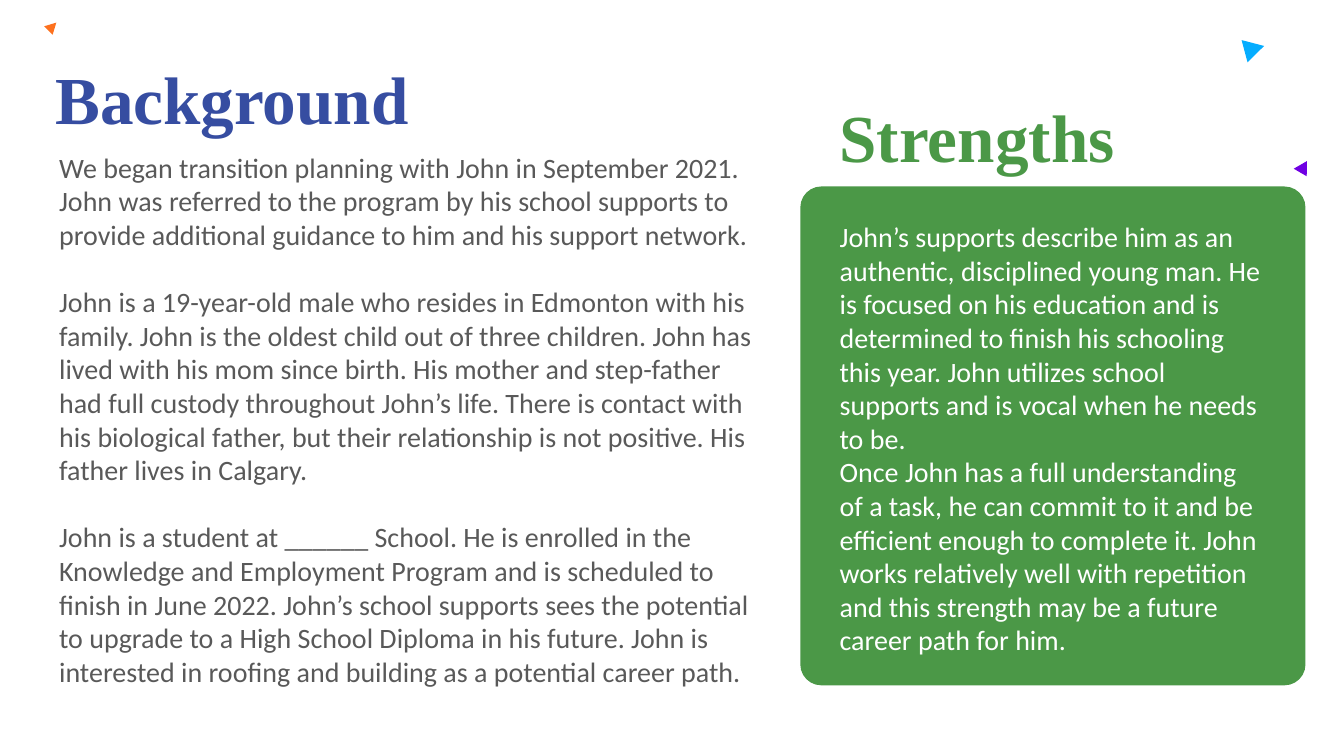
from dataclasses import dataclass

from pptx import Presentation
from pptx.dml.color import RGBColor
from pptx.enum.shapes import MSO_SHAPE
from pptx.enum.text import MSO_ANCHOR, MSO_AUTO_SIZE, PP_ALIGN
from pptx.util import Cm, Pt

TRIANGLE = MSO_SHAPE.ISOSCELES_TRIANGLE
ROUNDED = MSO_SHAPE.ROUNDED_RECTANGLE
BOTTOM = MSO_ANCHOR.BOTTOM
LEFT = PP_ALIGN.LEFT
FIXED = MSO_AUTO_SIZE.NONE
GROW = MSO_AUTO_SIZE.SHAPE_TO_FIT_TEXT


@dataclass(frozen=True)
class Theme:
    """Colours, fonts and type sizes of the slide."""
    blue: str = "364DA1"
    green: str = "4B9847"
    grey: str = "595959"
    white: str = "FFFFFF"
    sky: str = "05ADFF"
    orange: str = "FD711E"
    purple: str = "7000E3"
    heading_font: str = "Times New Roman"
    body_font: str = "Calibri"
    heading_size: int = 48
    body_size: int = 20
    paragraph_gap: int = 24


THEME = Theme()

BACKGROUND = [
    "We began transition planning with John in September 2021. John was referred to the program "
    "by his school supports to provide additional guidance to him and his support network.",
    "John is a 19-year-old male who resides in Edmonton with his family. John is the oldest child "
    "out of three children. John has lived with his mom since birth. His mother and step-father "
    "had full custody throughout John’s life. There is contact with his biological father, but "
    "their relationship is not positive. His father lives in Calgary.",
    "John is a student at ______ School. He is enrolled in the Knowledge and Employment Program "
    "and is scheduled to finish in June 2022. John’s school supports sees the potential to upgrade "
    "to a High School Diploma in his future. John is interested in roofing and building as a "
    "potential career path.",
]
STRENGTHS = [
    "John’s supports describe him as an authentic, disciplined young man. He is focused on his "
    "education and is determined to finish his schooling this year. John utilizes school supports "
    "and is vocal when he needs to be.",
    "Once John has a full understanding of a task, he can commit to it and be efficient enough to "
    "complete it. John works relatively well with repetition and this strength may be a future "
    "career path for him.",
]
CONFETTI = [
    (31.32, 0.97, 0.58, 0.51, 75, THEME.sky),
    (1.17, 0.53, 0.3, 0.28, 45, THEME.orange),
    (32.66, 4.04, 0.38, 0.33, 30.2, THEME.purple),
]


def style_font(font, name, size, color, bold=False):
    """Apply a typeface, size, colour and weight."""
    font.name, font.size, font.bold = name, Pt(size), bold
    font.color.rgb = RGBColor.from_string(color)


def add_shape(s, kind, x, y, w, h, color):
    """Add a flat filled shape."""
    shape = s.shapes.add_shape(kind, Cm(x), Cm(y), Cm(w), Cm(h))
    shape.shadow.inherit = False
    shape.fill.solid()
    shape.fill.fore_color.rgb = RGBColor.from_string(color)
    shape.line.fill.background()
    return shape


def place_heading(shape, text, color, x, y, w, h):
    """Place a heading so that its text sits on the bottom of its box."""
    shape.left, shape.top, shape.width, shape.height = Cm(x), Cm(y), Cm(w), Cm(h)
    tf = shape.text_frame
    tf.text = text
    tf.word_wrap = True
    tf.auto_size = FIXED
    tf.vertical_anchor = BOTTOM
    tf.margin_top = tf.margin_bottom = 0
    p = tf.paragraphs[0]
    p.alignment = LEFT
    p.line_spacing = 1.0
    style_font(p.runs[0].font, THEME.heading_font, THEME.heading_size, color, True)


def add_body(s, paragraphs, color, x, y, w, h, gap=0):
    """Add body paragraphs with an even gap between them."""
    tf = s.shapes.add_textbox(Cm(x), Cm(y), Cm(w), Cm(h)).text_frame
    tf.word_wrap = True
    tf.text = "\n".join(paragraphs)
    tf.auto_size = GROW
    for i, p in enumerate(tf.paragraphs):
        p.space_before = Pt(gap if i else 0)
        style_font(p.runs[0].font, THEME.body_font, THEME.body_size, color)


def add_background(s, x, y, w, h):
    """Fill the left region with the slide title and the background text."""
    place_heading(s.shapes.title, "Background", THEME.blue, x, y, 12.14, 2.25)
    add_body(s, BACKGROUND, THEME.grey, x + 0.1, y + 2.44, w - 0.1, h - 2.44,
             THEME.paragraph_gap)


def add_strengths(s, x, y, w, h):
    """Fill the right region with a heading above a green card."""
    inset, head = 0.74, 2.52
    add_shape(s, ROUNDED, x, y + head, w, h - head, THEME.green).adjustments[0] = 0.042
    add_body(s, STRENGTHS, THEME.white, x + inset, y + head + 0.71, w - 2 * inset, 11.38)
    heading = s.shapes.add_textbox(0, 0, 0, 0)
    place_heading(heading, "Strengths", THEME.green, x + inset, y, w - inset, 2.26)


def add_confetti(s):
    """Scatter the small turned triangles around the edges."""
    for x, y, w, h, angle, color in CONFETTI:
        add_shape(s, TRIANGLE, x, y, w, h, color).rotation = angle


def main():
    """Build and save the slide."""
    prs = Presentation()
    prs.slide_width, prs.slide_height = Cm(33.87), Cm(19.05)
    s = prs.slides.add_slide(prs.slide_layouts[5])
    add_confetti(s)
    add_background(s, 1.14, 1.22, 18.06, 16.38)
    add_strengths(s, 20.17, 2.18, 12.73, 15.09)
    prs.save("out.pptx")


if __name__ == "__main__":
    main()
